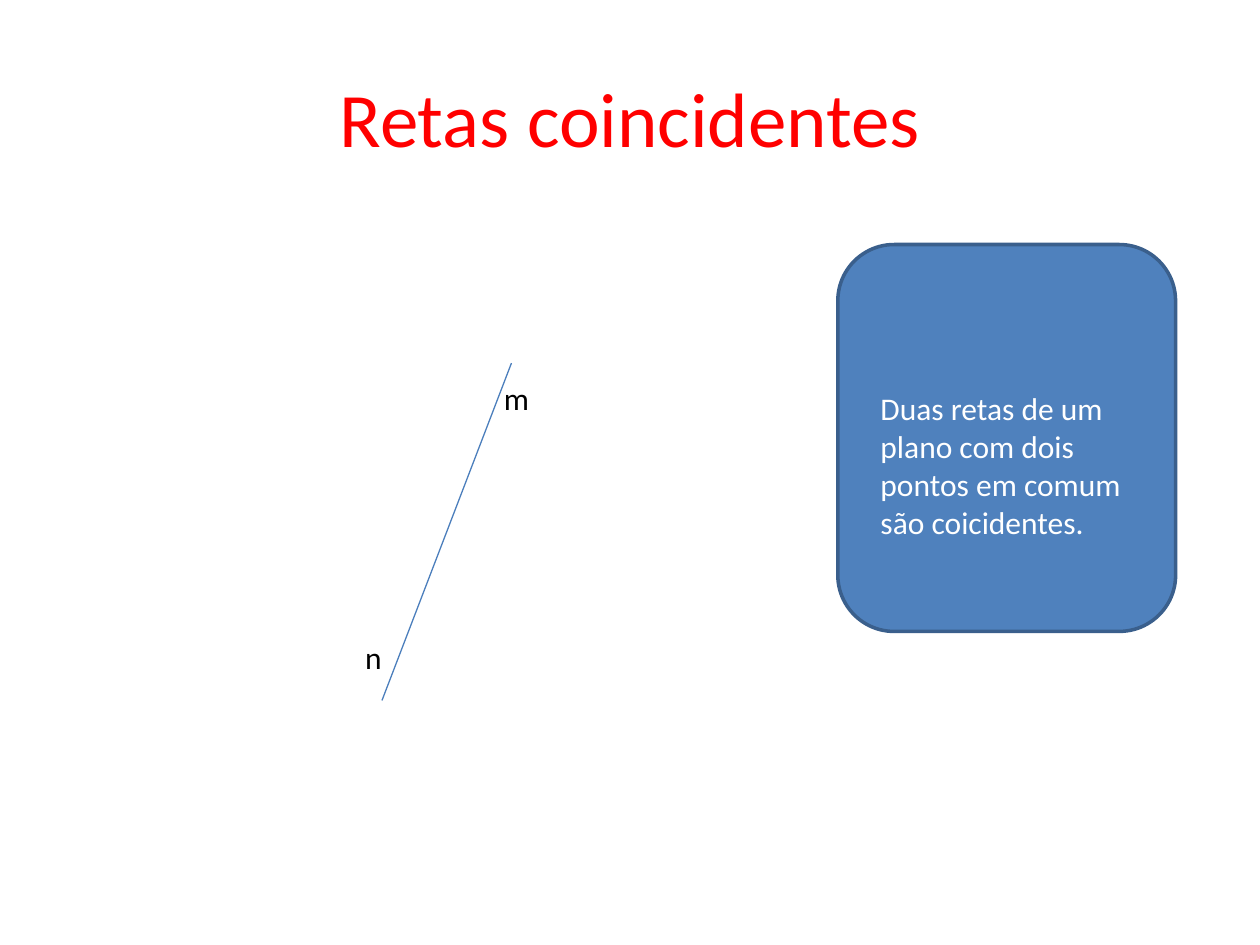
from pptx import Presentation
from pptx import util as u
from pptx.dml.color import RGBColor
from pptx.enum import shapes, text
from pptx.oxml.ns import qn
from lxml import etree

RED = RGBColor(0xFF, 0x00, 0x00)
BLACK = RGBColor(0x00, 0x00, 0x00)
WHITE = RGBColor(0xFF, 0xFF, 0xFF)
CARD_BLUE = RGBColor(0x4F, 0x81, 0xBD)
CARD_EDGE = RGBColor(0x3A, 0x5F, 0x8C)
LINE_BLUE = RGBColor(0x4B, 0x7E, 0xBC)
FONT = "Calibri"

# Content: places are left, top, width, height in cm
TITLE = "Retas coincidentes"
TITLE_BOX = (1.27, 0.76, 22.86, 3.18)
LINE_ENDS = (10.31, 7.32, 7.7, 14.12)
CARD_BOX = (16.89, 4.93, 6.81, 7.8)
LABELS = [
    ("m", (9.91, 7.52, 1.4, 1.02), BLACK, True),
    ("n", (7.11, 12.73, 0.86, 1.02), BLACK, False),
    ("Duas retas de um plano com dois pontos em comum são coicidentes.",
     (17.5, 7.72, 5.59, 3.33), WHITE, True),
]


def cm(values):
    return [u.Cm(value) for value in values]


def add_run(paragraph, words, size, color):
    run = paragraph.add_run()
    run.text = words
    run.font.name = FONT
    run.font.size = u.Pt(size)
    run.font.color.rgb = color


presentation = Presentation()
presentation.slide_width, presentation.slide_height = cm((25.4, 19.05))
slide = presentation.slides.add_slide(presentation.slide_layouts[5])

# Title
title = slide.shapes.title
title.left, title.top, title.width, title.height = cm(TITLE_BOX)
title.text_frame.vertical_anchor = text.MSO_ANCHOR.MIDDLE
paragraph = title.text_frame.paragraphs[0]
paragraph.alignment = text.PP_ALIGN.CENTER
add_run(paragraph, TITLE, 44, RED)

# Coincident lines
line = slide.shapes.add_connector(shapes.MSO_CONNECTOR.STRAIGHT, *cm(LINE_ENDS))
line.line.color.rgb = LINE_BLUE
line.line.width = u.Pt(0.75)
etree.SubElement(line._element.spPr, qn("a:effectLst"))

# Definition card
card = slide.shapes.add_shape(shapes.MSO_SHAPE.ROUNDED_RECTANGLE, *cm(CARD_BOX))
card.shadow.inherit = False
card.fill.solid()
card.fill.fore_color.rgb = CARD_BLUE
card.line.color.rgb = CARD_EDGE
card.line.width = u.Pt(2)

# Line names and definition
for words, box, color, wrap in LABELS:
    frame = slide.shapes.add_textbox(*cm(box)).text_frame
    frame.word_wrap = wrap
    frame.auto_size = text.MSO_AUTO_SIZE.SHAPE_TO_FIT_TEXT
    add_run(frame.paragraphs[0], words, 18, color)

presentation.save("out.pptx")
